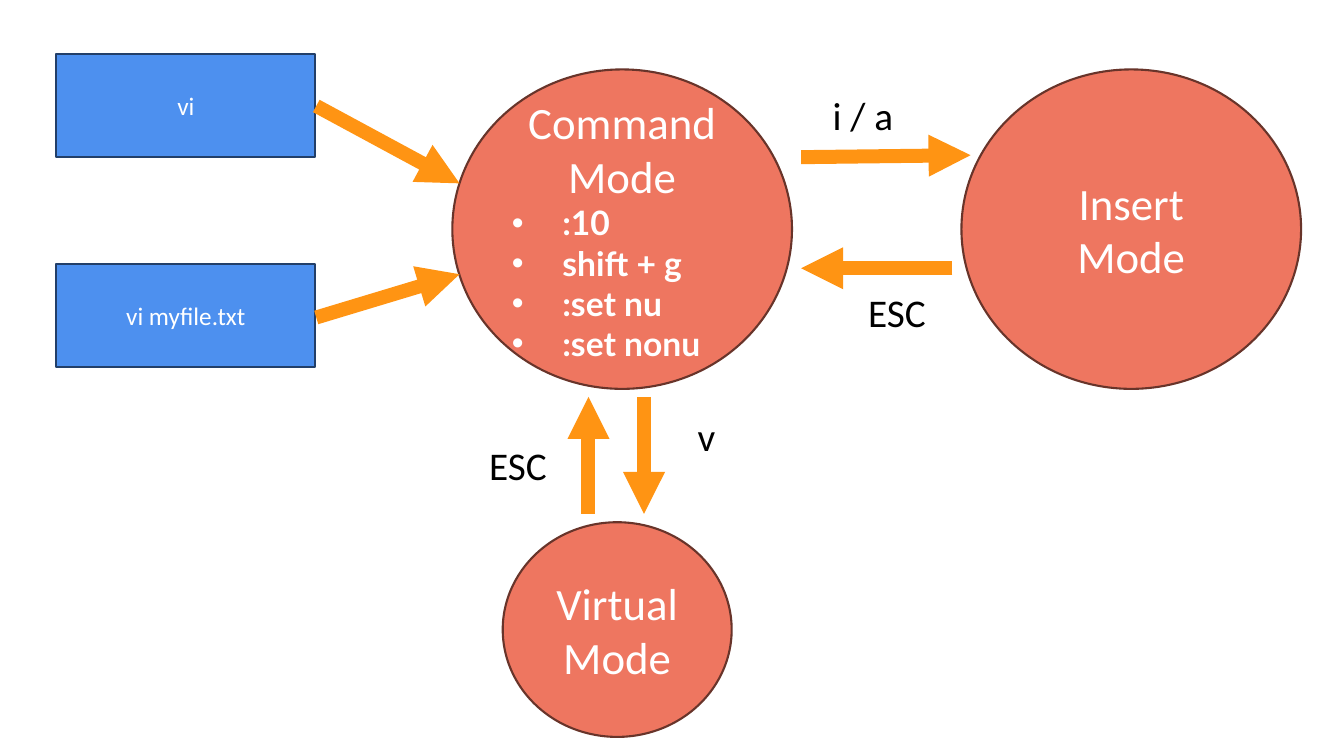
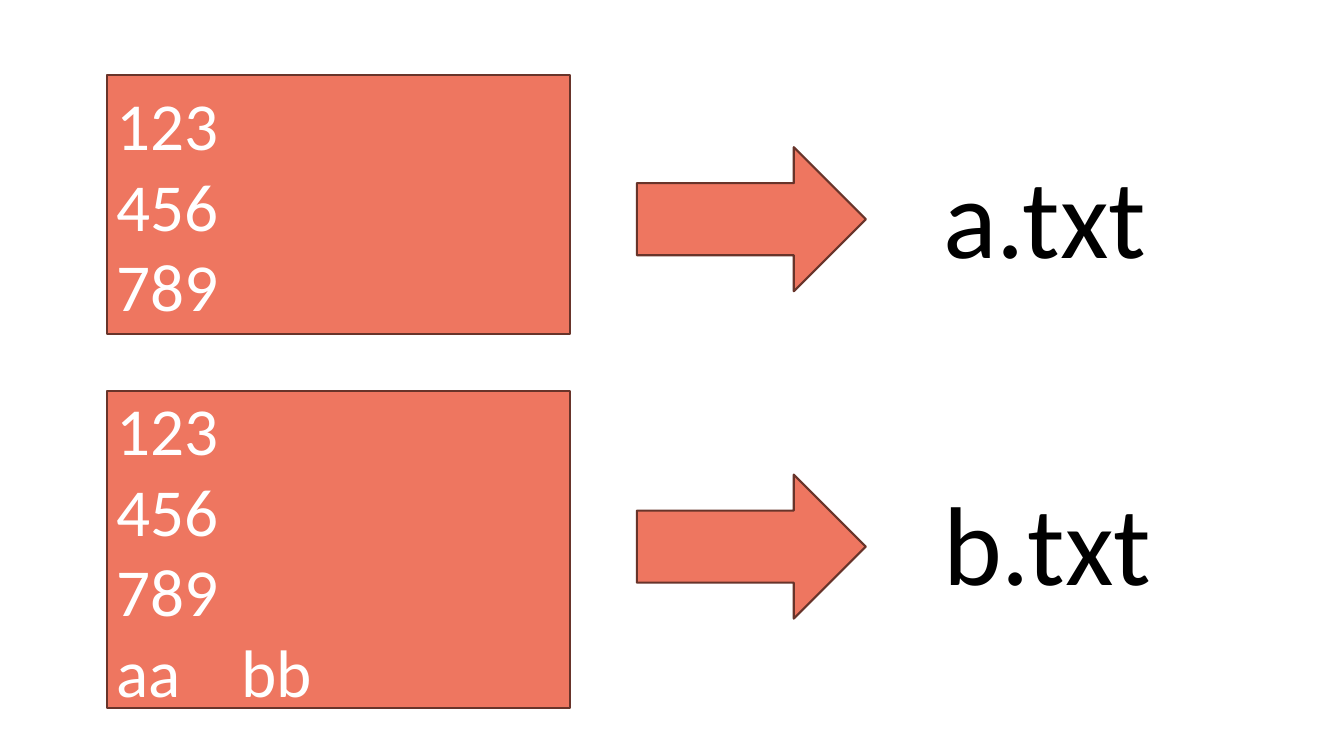
from lxml import etree
from pptx import Presentation
from pptx.dml.color import RGBColor
from pptx.enum import shapes, text
from pptx.oxml import ns
from pptx.util import Cm, Pt

# Shared colours and text formats
COLORS = {"white": "FFFFFF", "black": "000000", "blue": "4D90EF", "navy": "223F69",
          "coral": "EE7660", "brown": "68342A", "orange": "FF9413"}
BLUE, CORAL = ("blue", "navy"), ("coral", "brown")
COMMAND = {"name": "Calibri", "size": Pt(18)}
MODE = {"name": "Calibri", "size": Pt(32)}
KEYS = {"name": "Lato", "size": Pt(24), "bold": True}
LABEL = {"name": "Calibri", "size": Pt(28)}
CONTENT = {"name": "Calibri", "size": Pt(48)}
FILE = {"name": "Calibri", "size": Pt(80)}
INDENT = Cm(1.27)
TAB = Cm(3.15)
LEFT, CENTER = text.PP_ALIGN.LEFT, text.PP_ALIGN.CENTER
SHAPE = shapes.MSO_SHAPE


def rgb(name):
    return RGBColor.from_string(COLORS[name])


def add_child(parent, tag, **attrs):
    return etree.SubElement(parent, ns.qn(tag), **attrs)


def add_lines(tf, lines, fmt, color, align=CENTER, bullet=False):
    """Write one paragraph per line, after any text already there."""
    for line in lines:
        p = tf.add_paragraph() if tf.text else tf.paragraphs[0]
        p.alignment = align
        pPr = p._p.get_or_add_pPr()
        if bullet:
            pPr.set("marL", str(INDENT))
            pPr.set("indent", str(-INDENT))
            add_child(pPr, "a:buFont", typeface="Arial")
            add_child(pPr, "a:buChar", char="•")
        if "\t" in line:
            tabs = add_child(pPr, "a:tabLst")
            add_child(tabs, "a:tab", pos=str(TAB), algn="l")
        r = p.add_run()
        r.text = line
        for name, value in fmt.items():
            setattr(r.font, name, value)
        r.font.color.rgb = rgb(color)


def add_shape(s, kind, box, colors, lines=(), fmt=None, align=CENTER):
    """Draw a filled, outlined shape and return its text frame."""
    sp = s.shapes.add_shape(kind, *map(Cm, box))
    sp.shadow.inherit = False
    fill, line = colors
    sp.fill.solid()
    sp.fill.fore_color.rgb = rgb(fill)
    sp.line.color.rgb = rgb(line)
    sp.line.width = Pt(1.5)
    tf = sp.text_frame
    tf.word_wrap = True
    tf.vertical_anchor = text.MSO_ANCHOR.MIDDLE
    add_lines(tf, lines, fmt, "white", align)
    return tf


def add_label(s, box, label, fmt, align=CENTER, wrap=True):
    tf = s.shapes.add_textbox(*map(Cm, box)).text_frame
    tf.word_wrap = wrap
    tf.auto_size = text.MSO_AUTO_SIZE.SHAPE_TO_FIT_TEXT
    add_lines(tf, [label], fmt, "black", align)


def add_arrow(s, start, end):
    sp = s.shapes.add_connector(shapes.MSO_CONNECTOR.STRAIGHT, *map(Cm, start + end))
    sp.line.color.rgb = rgb("orange")
    sp.line.width = Pt(10)
    add_child(sp.line._get_or_add_ln(), "a:tailEnd", type="triangle")
    add_child(sp._element.spPr, "a:effectLst")


def build_modes(s):
    # Commands that start the editor
    for top, command in ((1.37, "vi"), (6.66, "vi myfile.txt")):
        add_shape(s, SHAPE.RECTANGLE, (1.42, top, 6.53, 2.59), BLUE, [command], COMMAND)

    # Editor modes
    modes = {"Command": (11.4, 1.75, 8.56, 8.05),
             "Insert": (24.23, 1.75, 8.56, 8.05),
             "Virtual": (12.67, 13.16, 5.77, 5.41)}
    frames = {name: add_shape(s, SHAPE.OVAL, box, CORAL, [name, "Mode"], MODE)
              for name, box in modes.items()}
    add_lines(frames["Command"], [":10", "shift + g", ":set nu", ":set nonu"],
              KEYS, "white", LEFT, bullet=True)

    # Transitions
    for start, end in (((7.97, 2.67), (11.58, 4.62)),
                       ((7.97, 8), (11.58, 6.91)),
                       ((20.19, 3.96), (24.46, 3.91)),
                       ((24, 6.76), (20.19, 6.76)),
                       ((16.23, 10), (16.23, 12.95)),
                       ((14.83, 12.95), (14.83, 10))):
        add_arrow(s, start, end)

    # Keys that trigger them
    for left, top, key in ((20.5, 2.18, "i / a"), (21.36, 7.14, "ESC"),
                           (11.81, 11, "ESC"), (16.56, 10.26, "v")):
        add_label(s, (left, top, 2.49, 1.45), key, LABEL)


def build_files(s):
    numbers = ["123", "456", "789"]
    rows = ((1.88, 6.53, 3.71, numbers, "a.txt"),
            (9.86, 7.98, 11.96, numbers + ["aa\tbb"], "b.txt"))
    for top, height, arrow_top, lines, name in rows:
        add_shape(s, SHAPE.RECTANGLE, (2.69, top, 11.68, height), CORAL,
                  lines, CONTENT, LEFT)
        add_shape(s, SHAPE.RIGHT_ARROW, (16.05, arrow_top, 5.77, 3.63), CORAL)
        add_label(s, (23.52, arrow_top - 0.15, 6, 3.68), name, FILE, LEFT, wrap=False)


def main():
    prs = Presentation()
    prs.slide_width, prs.slide_height = Cm(33.87), Cm(19.05)
    for build in (build_modes, build_files):
        build(prs.slides.add_slide(prs.slide_layouts[6]))
    prs.save("out.pptx")


if __name__ == "__main__":
    main()
